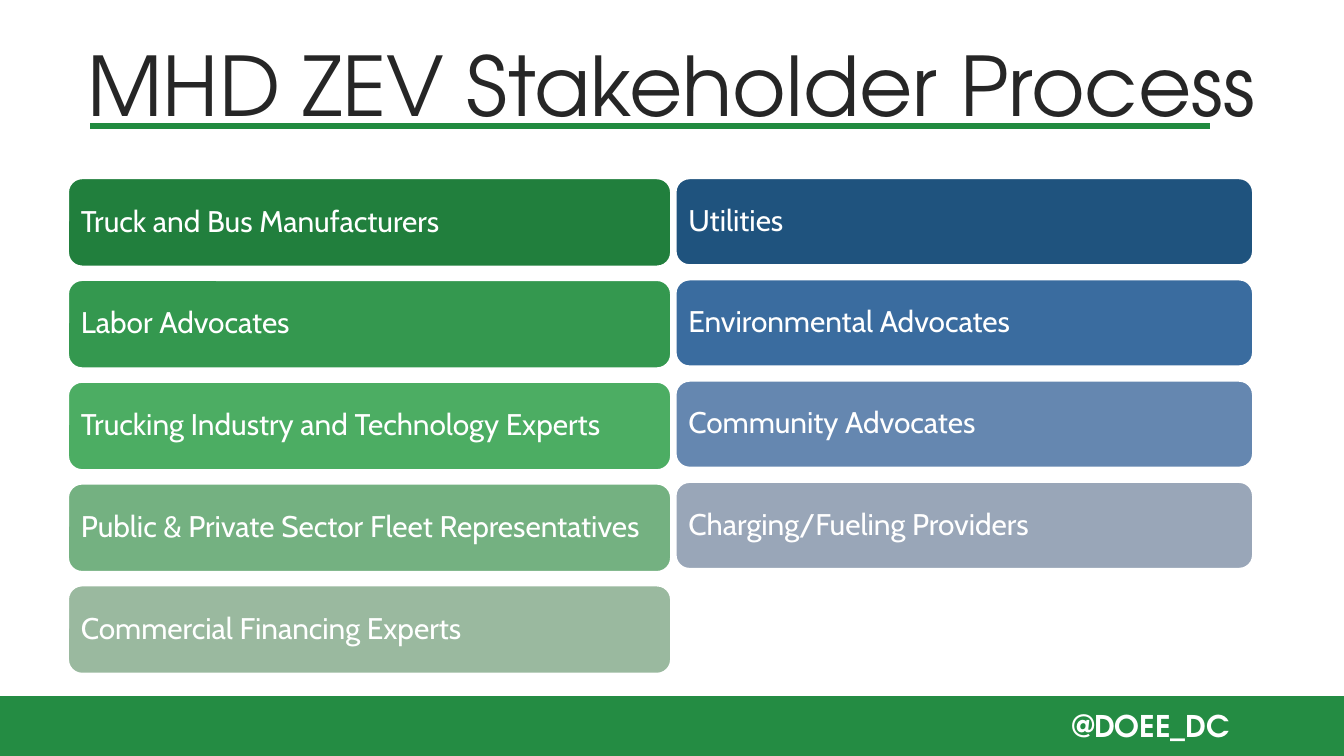
import pptx
import pptx.dml.color
import pptx.enum.shapes
import pptx.enum.text
import pptx.oxml.ns
import pptx.util
from lxml import etree

Inches = pptx.util.Inches
Align = pptx.enum.text.PP_ALIGN
Anchor = pptx.enum.text.MSO_ANCHOR
Shape = pptx.enum.shapes.MSO_SHAPE

WIDTH = 10
HEIGHT = WIDTH * 9 / 16
TITLE_FONT, BODY_FONT = "TeX Gyre Adventor", "Cabin"
COLORS = {"band": "248C43", "rule": "218B40", "title": "262626", "white": "FFFFFF"}

# Grid of stakeholder cards: each column spreads evenly from TOP to its last card
TOP = 1.32
COLUMNS = [
    {"left": 0.5, "width": 4.5, "height": 0.67, "last": 4.35, "cards": [
        ("Truck and Bus Manufacturers", "217F3D"),
        ("Labor Advocates", "34984F"),
        ("Trucking Industry and Technology Experts", "4CAD63"),
        ("Public & Private Sector Fleet Representatives", "74B181"),
        ("Commercial Financing Experts", "9AB99F"),
    ]},
    {"left": 5.02, "width": 4.31, "height": 0.66, "last": 3.58, "cards": [
        ("Utilities", "1F537E"),
        ("Environmental Advocates", "3A6C9F"),
        ("Community Advocates", "6587B0"),
        ("Charging/Fueling Providers", "99A6B8"),
    ]},
]


def rgb(value):
    return pptx.dml.color.RGBColor.from_string(value)


def write(frame, text, *, font, size, color=COLORS["white"], bold=False,
          align=Align.LEFT, anchor=Anchor.MIDDLE, spacing=None, margin=None):
    frame.word_wrap = True
    frame.auto_size = pptx.enum.text.MSO_AUTO_SIZE.NONE
    frame.vertical_anchor = anchor
    if margin is not None:
        frame.margin_left = frame.margin_right = Inches(margin)
        frame.margin_top = frame.margin_bottom = Inches(margin)
    para = frame.paragraphs[0]
    para.alignment = align
    para.line_spacing = spacing
    span = para.add_run()
    span.text = text
    span.font.name = font
    span.font.size = pptx.util.Pt(size)
    span.font.bold = bold
    span.font.color.rgb = rgb(color)


def add_block(page, kind, left, top, width, height, fill, outline=None):
    block = page.shapes.add_shape(
        kind, Inches(left), Inches(top), Inches(width), Inches(height))
    block.shadow.inherit = False
    block.fill.solid()
    block.fill.fore_color.rgb = rgb(fill)
    if outline:
        block.line.color.rgb = rgb(outline)
        block.line.width = pptx.util.Pt(2)
    else:
        block.line.fill.background()
    return block


def add_footer(page):
    add_block(page, Shape.RECTANGLE, 0, 5.18, WIDTH, 0.51, COLORS["band"])
    box = page.shapes.add_textbox(Inches(7.75), Inches(5.22), Inches(1.5), Inches(0.37))
    write(box.text_frame, "@DOEE_DC", font=TITLE_FONT, size=16, bold=True,
          align=Align.RIGHT, anchor=Anchor.TOP)


def add_rule(page, left, right, top):
    rule = page.shapes.add_connector(
        pptx.enum.shapes.MSO_CONNECTOR.STRAIGHT,
        Inches(left), Inches(top), Inches(right), Inches(top))
    rule.line.color.rgb = rgb(COLORS["rule"])
    rule.line.width = pptx.util.Pt(3)
    etree.SubElement(rule._element.spPr, pptx.oxml.ns.qn("a:effectLst"))


def add_title(page, text):
    title = page.shapes.title
    title.left, title.top = Inches(0.5), Inches(0.15)
    title.width, title.height = Inches(9), Inches(0.94)
    write(title.text_frame, text, font=TITLE_FONT, size=44,
          color=COLORS["title"], align=Align.CENTER)


def add_column(page, left, width, height, last, cards):
    pitch = (last - TOP) / (len(cards) - 1)
    for row, (text, fill) in enumerate(cards):
        card = add_block(page, Shape.ROUNDED_RECTANGLE, left, TOP + row * pitch,
                         width, height, fill, outline=COLORS["white"])
        # The inset of the rounded corners adds to the margin
        write(card.text_frame, text, font=BODY_FONT, size=16, spacing=0.9, margin=0.07)


def main():
    deck = pptx.Presentation()
    deck.slide_width, deck.slide_height = Inches(WIDTH), Inches(HEIGHT)
    page = deck.slides.add_slide(deck.slide_layouts.get_by_name("Title Only"))

    # Frame of the slide
    add_footer(page)
    add_rule(page, 0.67, 9, 0.94)
    add_title(page, "MHD ZEV Stakeholder Process")

    # Stakeholder groups
    for column in COLUMNS:
        add_column(page, **column)

    deck.save("out.pptx")


if __name__ == "__main__":
    main()
